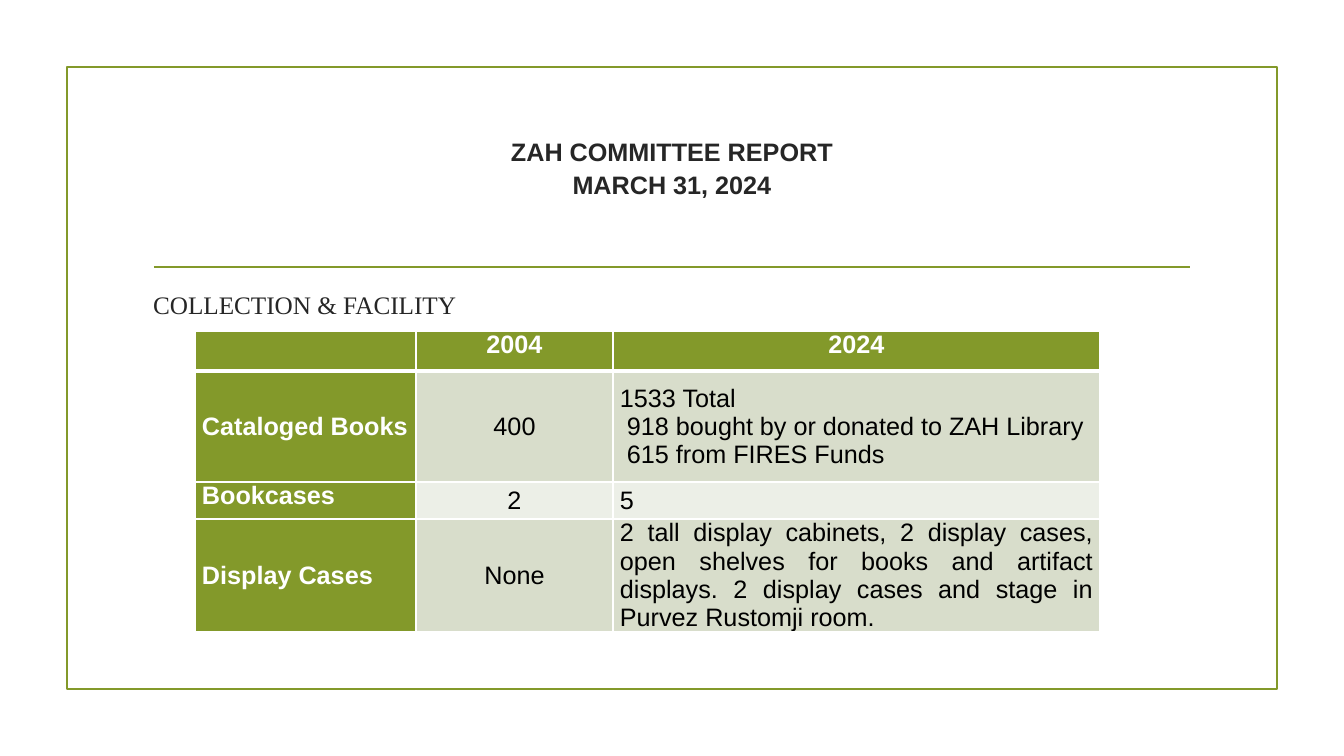
from lxml.etree import SubElement
from pptx import Presentation
from pptx.dml.color import RGBColor
from pptx.enum.shapes import MSO_CONNECTOR, MSO_SHAPE
from pptx.enum.text import MSO_ANCHOR, MSO_AUTO_SIZE, PP_ALIGN
from pptx.oxml.ns import qn
from pptx.util import Emu, Pt

PX = 12192000 / 1344
COLORS = {"olive": "83992A", "ink": "262626", "black": "000000",
          "white": "FFFFFF", "sage": "D8DDCB", "mist": "ECEFE7"}
COLUMNS = [221, 197, 487]
ROWS = [40, 111, 37, 111]
FACILITY = [
    ["", "2004", "2024"],
    ["Cataloged Books", "400",
     "1533 Total\n 918 bought by or donated to ZAH Library\n 615 from FIRES Funds"],
    ["Bookcases", "2", "5"],
    ["Display Cases", "None",
     "2 tall display cabinets, 2 display cases, open shelves for books and "
     "artifact displays. 2 display cases and stage in Purvez Rustomji room."],
]


def px(length):
    return Emu(round(length * PX))


def color(name):
    return RGBColor.from_string(COLORS[name])


def style_text(frame, font, ink, align, bold=False):
    for paragraph in frame.paragraphs:
        paragraph.alignment = align
        for run in paragraph.runs:
            run.font.name = font
            run.font.size = Pt(18)
            run.font.bold = bold
            run.font.color.rgb = color(ink)


def fill_placeholder(holder, box, text, font, align, anchor, bold=False):
    holder.left, holder.top, holder.width, holder.height = map(px, box)
    frame = holder.text_frame
    frame.text = text
    frame.word_wrap = True
    frame.auto_size = MSO_AUTO_SIZE.NONE
    frame.vertical_anchor = anchor
    for paragraph in frame.paragraphs:
        properties = paragraph._p.get_or_add_pPr()
        properties.set("marL", "0")
        properties.set("indent", "0")
        SubElement(properties, qn("a:buNone"))
        paragraph.line_spacing = 1.1
        paragraph.space_before = Pt(0)
    style_text(frame, font, "ink", align, bold)


def add_frame(slide, box):
    frame = slide.shapes.add_shape(MSO_SHAPE.RECTANGLE, *map(px, box))
    frame.shadow.inherit = False
    frame.fill.background()
    frame.line.color.rgb = color("olive")
    frame.line.width = Pt(1.25)


def add_rule(slide, left, right, y):
    rule = slide.shapes.add_connector(
        MSO_CONNECTOR.STRAIGHT, px(left), px(y), px(right), px(y))
    rule.line.color.rgb = color("olive")
    rule.line.width = Pt(1.25)
    SubElement(rule._element.spPr, qn("a:effectLst"))


def add_borders(cell, widths):
    properties = cell._tc.get_or_add_tcPr()
    for side, width in widths.items():
        border = SubElement(properties, qn(f"a:ln{side}"), w=str(Pt(width)))
        fill = SubElement(border, qn("a:solidFill"))
        SubElement(fill, qn("a:srgbClr"), val=COLORS["white"])


def fill_cell(cell, text, row, column):
    heading = row == 0 or column == 0
    add_borders(cell, {"L": 1, "R": 1, "T": 3 if row == 1 else 1,
                       "B": 3 if row == 0 else 1})
    cell.fill.solid()
    cell.fill.fore_color.rgb = color(
        "olive" if heading else "sage" if row % 2 else "mist")
    cell.margin_left = cell.margin_right = px(7)
    cell.margin_top = cell.margin_bottom = 0
    top = row == 0 or (row, column) == (2, 0)
    cell.vertical_anchor = MSO_ANCHOR.TOP if top else MSO_ANCHOR.MIDDLE
    cell.text_frame.text = text
    if row == 0 or column == 1:
        align = PP_ALIGN.CENTER
    elif (row, column) == (3, 2):
        align = PP_ALIGN.JUSTIFY
    else:
        align = PP_ALIGN.LEFT
    style_text(cell.text_frame, "Arial", "white" if heading else "black",
               align, heading)


def add_facility_table(slide, left, top):
    table = slide.shapes.add_table(
        len(ROWS), len(COLUMNS), px(left), px(top),
        px(sum(COLUMNS)), px(sum(ROWS))).table
    for column, width in zip(table.columns, COLUMNS):
        column.width = px(width)
    for row, height in zip(table.rows, ROWS):
        row.height = px(height)
    for r, texts in enumerate(FACILITY):
        for c, text in enumerate(texts):
            fill_cell(table.cell(r, c), text, r, c)


def main():
    """Build the committee report slide."""
    report = Presentation()
    report.slide_width, report.slide_height = px(1344), px(756)
    slide = report.slides.add_slide(report.slide_layouts[1])
    add_frame(slide, (67, 67, 1210, 622))
    add_rule(slide, 154, 1190, 267)
    fill_placeholder(slide.shapes.title, (143, 108, 1058, 117),
                     "ZAH COMMITTEE REPORT\vMARCH 31, 2024", "Arial",
                     PP_ALIGN.CENTER, MSO_ANCHOR.MIDDLE, True)
    fill_placeholder(slide.placeholders[1], (143, 281, 1058, 400),
                     "COLLECTION & FACILITY", "Times New Roman",
                     PP_ALIGN.LEFT, MSO_ANCHOR.TOP)
    add_facility_table(slide, 195, 331)
    report.save("out.pptx")


if __name__ == "__main__":
    main()
